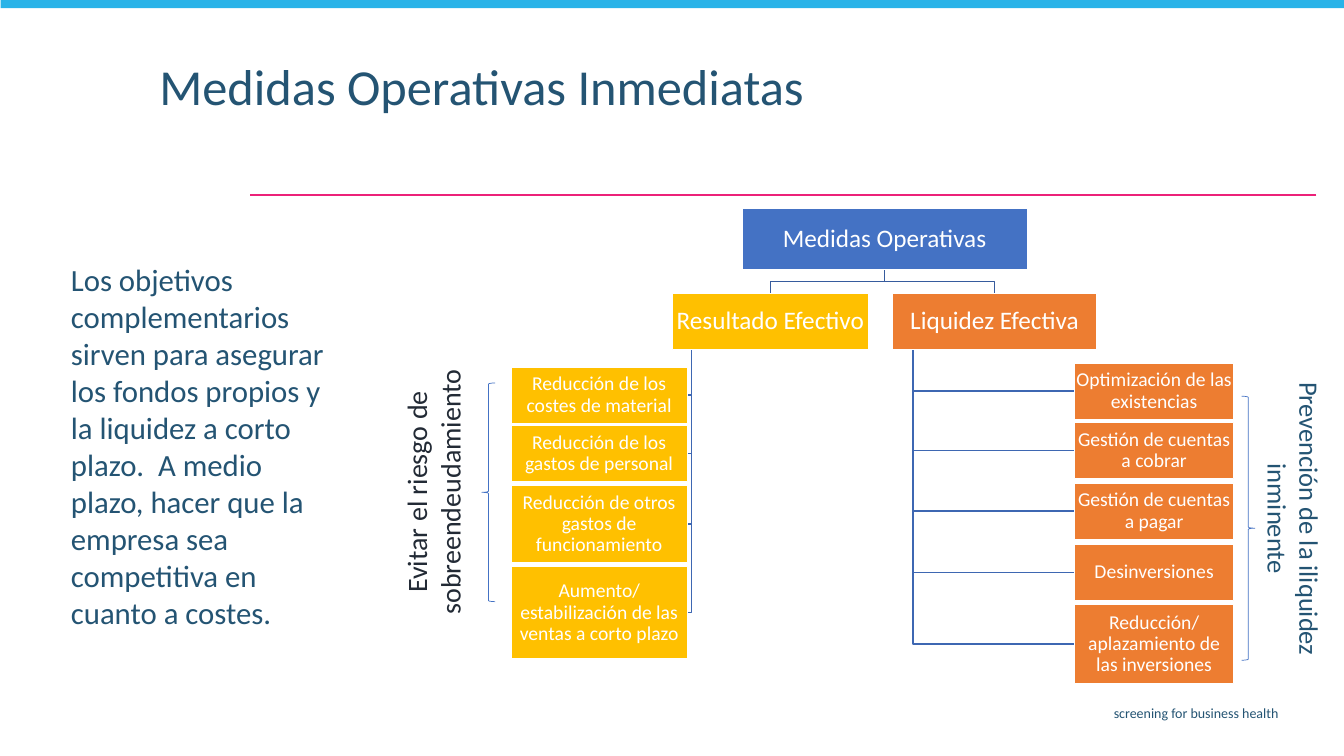
from dataclasses import dataclass

from lxml import etree
from pptx import Presentation
from pptx import util as u
from pptx.dml.color import RGBColor
from pptx.enum import shapes, text
from pptx.oxml.ns import qn

FONT = "Calibri"
NAVY, WHITE, YELLOW, ORANGE, BLUE = "245473", "FFFFFF", "FFC000", "ED7D31", "4472C4"
ROOT_LINK, BRANCH_LINK = "365B9D", "3E67B2"


@dataclass
class Box:
    label: str
    left: float
    top: float
    width: float
    height: float
    fill: str
    size: float = 14

    @property
    def center(self) -> float:
        return self.left + self.width / 2

    @property
    def middle(self) -> float:
        return self.top + self.height / 2

    @property
    def bottom(self) -> float:
        return self.top + self.height


@dataclass
class Branch:
    head: Box
    trunk: float
    reach: float
    measures: list[Box]


@dataclass
class Note:
    label: str
    left: float
    top: float
    width: float
    height: float
    size: float
    color: str
    align: text.PP_ALIGN
    rotation: float = 0


@dataclass
class Brace:
    kind: shapes.MSO_SHAPE
    left: float
    top: float
    height: float


def rgb(value: str) -> RGBColor:
    return RGBColor.from_string(value)


def pts(*values: float) -> list[int]:
    return [u.Pt(value) for value in values]


def write(frame, label: str, size: float, color: str, align: text.PP_ALIGN) -> None:
    frame.word_wrap = True
    paragraph = frame.paragraphs[0]
    paragraph.alignment = align
    paragraph.space_before = u.Pt(0)
    run = paragraph.add_run()
    run.text = label
    run.font.name = FONT
    run.font.size = u.Pt(size)
    run.font.color.rgb = rgb(color)


def draw_box(slide, box: Box) -> None:
    rect = slide.shapes.add_shape(
        shapes.MSO_SHAPE.RECTANGLE, *pts(box.left, box.top, box.width, box.height))
    rect.shadow.inherit = False
    rect.fill.solid()
    rect.fill.fore_color.rgb = rgb(box.fill)
    rect.line.color.rgb = rgb(WHITE)
    rect.line.width = u.Pt(1)
    frame = rect.text_frame
    frame.margin_left = frame.margin_right = u.Pt(0.9)
    frame.margin_top = frame.margin_bottom = u.Pt(0.9)
    frame.vertical_anchor = text.MSO_ANCHOR.MIDDLE
    write(frame, box.label, box.size, WHITE, text.PP_ALIGN.CENTER)
    frame.paragraphs[0].line_spacing = 0.9


def draw_link(slide, points: list[tuple[float, float]], color: str) -> None:
    start, *rest = [tuple(pts(*point)) for point in points]
    builder = slide.shapes.build_freeform(*start)
    builder.add_line_segments(rest, close=False)
    link = builder.convert_to_shape()
    link.shadow.inherit = False
    link.fill.background()
    link.line.color.rgb = rgb(color)
    link.line.width = u.Pt(1)


def draw_note(slide, note: Note) -> None:
    area = slide.shapes.add_textbox(*pts(note.left, note.top, note.width, note.height))
    area.rotation = note.rotation
    write(area.text_frame, note.label, note.size, note.color, note.align)


def draw_brace(slide, brace: Brace) -> None:
    shape = slide.shapes.add_shape(brace.kind, *pts(brace.left, brace.top, 9.4, brace.height))
    shape.shadow.inherit = False
    shape.fill.background()
    shape.line.color.rgb = rgb(BLUE)
    shape.line.width = u.Pt(0.5)


def draw_frame(slide) -> None:
    rule = slide.shapes.add_connector(
        shapes.MSO_CONNECTOR.STRAIGHT, *pts(940.3, 139, 178.6, 139))
    rule.line.color.rgb = rgb("EC2179")
    rule.line.width = u.Pt(1.5)
    etree.SubElement(rule._element.spPr, qn("a:effectLst"))
    band = slide.shapes.add_shape(shapes.MSO_SHAPE.RECTANGLE, *pts(0.5, -1.4, 960, 7.2))
    band.shadow.inherit = False
    band.fill.solid()
    band.fill.fore_color.rgb = rgb("29B3E8")
    band.line.fill.background()


def draw_title(slide) -> None:
    title = slide.shapes.title
    title.left, title.top, title.width, title.height = pts(106.6, 41, 697, 54.7)
    title.text_frame.vertical_anchor = text.MSO_ANCHOR.TOP
    write(title.text_frame, "Medidas Operativas Inmediatas", 36, NAVY, text.PP_ALIGN.LEFT)
    title.text_frame.paragraphs[0].line_spacing = 0.9


def draw_tree(slide, root: Box, branches: list[Branch]) -> None:
    for branch in branches:
        head = branch.head
        fork = (root.bottom + head.top) / 2
        draw_link(slide, [(root.center, root.bottom), (root.center, fork),
                          (head.center, fork), (head.center, head.top)], ROOT_LINK)
        for measure in branch.measures:
            draw_link(slide, [(branch.trunk, head.bottom), (branch.trunk, measure.middle),
                              (branch.reach, measure.middle)], BRANCH_LINK)
    draw_box(slide, root)
    for branch in branches:
        for box in [branch.head, *branch.measures]:
            draw_box(slide, box)


RESULT_MEASURES = [
    ("Reducción de los costes de material", 262.1, 40.3),
    ("Reducción de los gastos de personal", 303.8, 40.3),
    ("Reducción de otros gastos de funcionamiento", 347, 54.7),
    ("Aumento/estabilización de las ventas a corto plazo", 404.6, 66.2),
]
LIQUIDITY_MEASURES = [
    ("Optimización de las existencias", 259.2, 40.3),
    ("Gestión de cuentas a cobrar", 301.7, 40.3),
    ("Gestión de cuentas a pagar", 345, 40.3),
    ("Desinversiones", 388.7, 40.3),
    ("Reducción/ aplazamiento de las inversiones", 432, 56.2),
]
ROOT = Box("Medidas Operativas", 530, 149, 203.8, 43.6, BLUE, 18)
BRANCHES = [
    Branch(Box("Liquidez Efectiva", 637.2, 209.5, 146.4, 40.3, ORANGE, 18), 652.3, 767.5,
           [Box(label, 767.5, top, 113.8, height, ORANGE)
            for label, top, height in LIQUIDITY_MEASURES]),
    Branch(Box("Resultado Efectivo", 480.2, 209.5, 140.2, 40.3, YELLOW, 18), 493.9, 490.7,
           [Box(label, 365, top, 126, height, YELLOW)
            for label, top, height in RESULT_MEASURES]),
]
BRACES = [
    Brace(shapes.MSO_SHAPE.LEFT_BRACE, 344.2, 273.6, 156.2),
    Brace(shapes.MSO_SHAPE.RIGHT_BRACE, 887, 283, 188.6),
]
NOTES = [
    Note("screening for business health", 262.8, 499.7, 657.4, 20.9, 10, NAVY,
         text.PP_ALIGN.RIGHT),
    Note("Los objetivos complementarios sirven para asegurar los fondos propios y la "
         "liquidez a corto plazo.  A medio plazo, hacer que la empresa sea competitiva "
         "en cuanto a costes.", 43.6, 183, 199, 273, 22, NAVY, text.PP_ALIGN.LEFT),
    Note("Evitar el riesgo de sobreendeudamiento", 203.8, 324, 210.2, 54.7, 20, "222A35",
         text.PP_ALIGN.CENTER, 270),
    Note("Prevención de la iliquidez inminente", 811.4, 344.2, 226, 52.6, 19, NAVY,
         text.PP_ALIGN.CENTER, 90),
]


def main() -> None:
    deck = Presentation()
    deck.slide_width, deck.slide_height = pts(960, 540)
    slide = deck.slides.add_slide(deck.slide_layouts[5])
    draw_frame(slide)
    draw_title(slide)
    draw_tree(slide, ROOT, BRANCHES)
    for brace in BRACES:
        draw_brace(slide, brace)
    for note in NOTES:
        draw_note(slide, note)
    deck.save("out.pptx")


if __name__ == "__main__":
    main()
